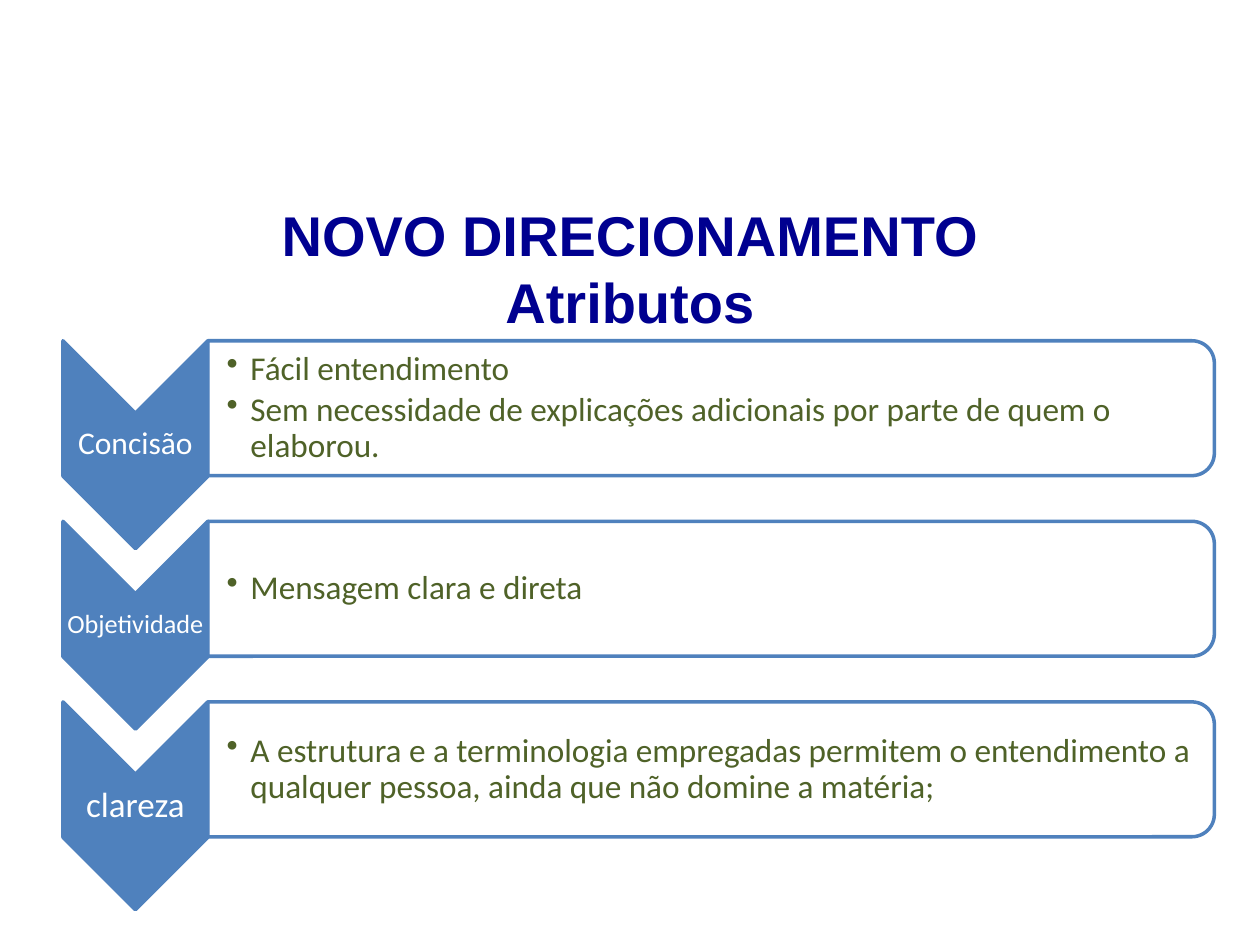
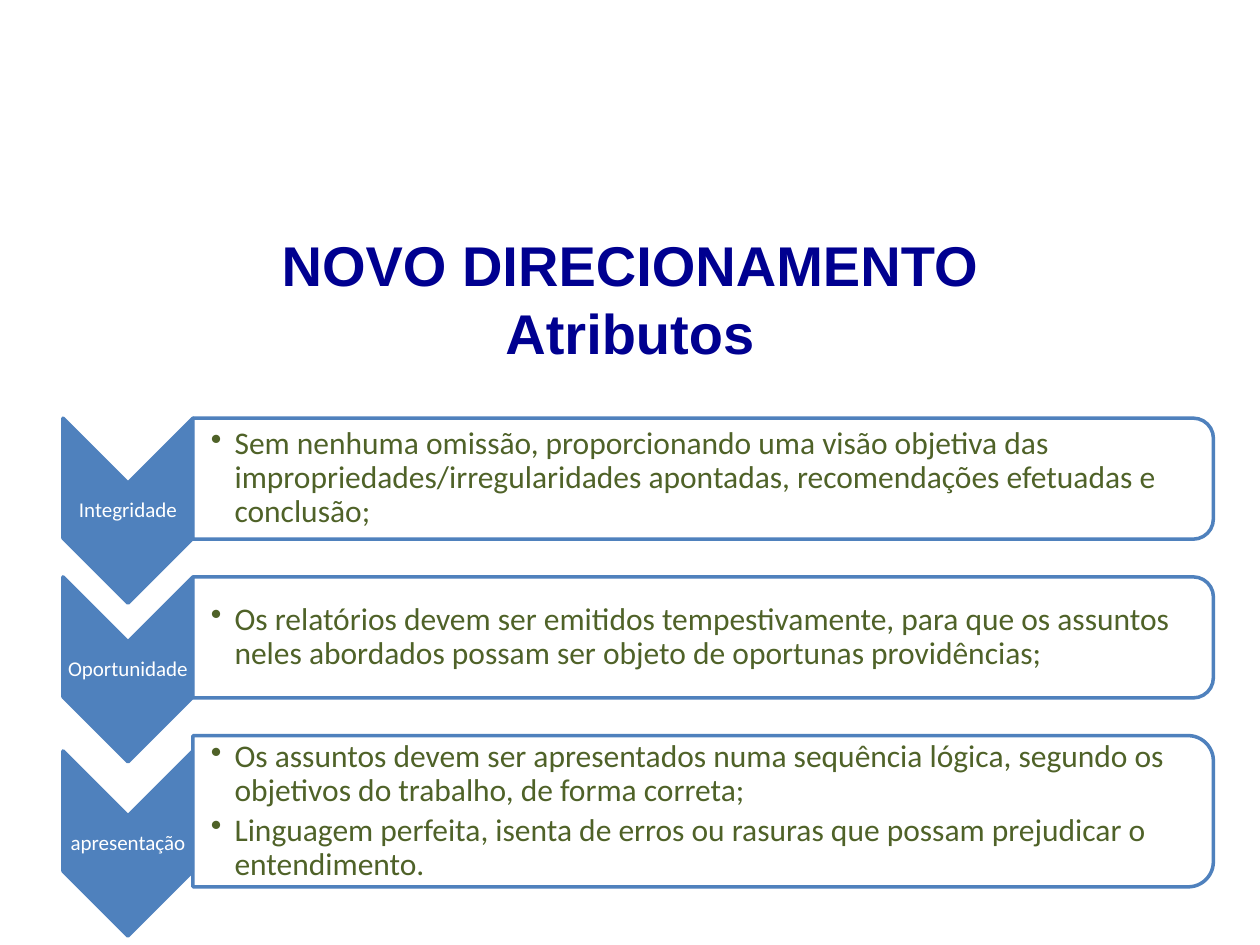
from dataclasses import dataclass

from lxml.etree import SubElement
from pptx import Presentation
from pptx.dml.color import RGBColor
from pptx.enum.shapes import MSO_SHAPE
from pptx.enum.text import MSO_ANCHOR, MSO_AUTO_SIZE, PP_ALIGN
from pptx.oxml.ns import qn
from pptx.util import Cm, Pt

COLORS = {
    "title": "000090",
    "accent": "4F81BD",
    "panel": "FFFFFF",
    "label": "FFFFFF",
    "item": "4F6228",
}
TITLE = "NOVO DIRECIONAMENTO\vAtributos"
TITLE_LAYOUT = 5
LEFT = 1.27
TITLE_WIDTH = 22.86
TITLE_HEIGHT = 3.18
THIN_INSET = 0.03
TEXT_MARGIN = 0.13
BULLET_INDENT = 0.48
PANEL_OPACITY = 90


@dataclass(frozen=True)
class Attribute:
    label: str
    label_size: int
    items: tuple[str, ...]
    panel_height: float
    chevron_shift: float = 0


@dataclass(frozen=True)
class AttributeSlide:
    title_top: float
    top: float
    pitch: float
    chevron_length: float
    chevron_width: float
    panel_width: float
    panel_inset: float
    item_size: int
    attributes: tuple[Attribute, ...]


@dataclass(frozen=True)
class Box:
    left: float
    top: float
    width: float
    height: float


SLIDES = (
    AttributeSlide(
        title_top=3.81, top=6.87, pitch=3.64,
        chevron_length=4.19, chevron_width=2.92,
        panel_width=20.29, panel_inset=0.38, item_size=19,
        attributes=(
            Attribute("Concisão", 18, (
                "Fácil entendimento",
                "Sem necessidade de explicações adicionais por parte de quem o elaborou.",
            ), 2.72),
            Attribute("Objetividade", 15, ("Mensagem clara e direta",), 2.72),
            Attribute("clareza", 20, (
                "A estrutura e a terminologia empregadas permitem o entendimento a "
                "qualquer pessoa, ainda que não domine a matéria;",
            ), 2.72),
        ),
    ),
    AttributeSlide(
        title_top=4.42, top=8.43, pitch=3.2,
        chevron_length=3.73, chevron_width=2.62,
        panel_width=20.57, panel_inset=0.36, item_size=18,
        attributes=(
            Attribute("Integridade", 12, (
                "Sem nenhuma omissão, proporcionando uma visão objetiva das "
                "impropriedades/irregularidades apontadas, recomendações efetuadas e conclusão;",
            ), 2.44),
            Attribute("Oportunidade", 12, (
                "Os relatórios devem ser emitidos tempestivamente, para que os assuntos "
                "neles abordados possam ser objeto de oportunas providências;",
            ), 2.44),
            Attribute("apresentação", 12, (
                "Os assuntos devem ser apresentados numa sequência lógica, segundo os "
                "objetivos do trabalho, de forma correta;",
                "Linguagem perfeita, isenta de erros ou rasuras que possam prejudicar o "
                "entendimento.",
            ), 3.05, chevron_shift=0.31),
        ),
    ),
)


def apply_format(target, values: dict) -> None:
    for name, value in values.items():
        setattr(target, name, value)


def format_font(font, name: str, size: int, color: str, bold: bool = False) -> None:
    apply_format(font, {"name": name, "size": Pt(size), "bold": bold})
    font.color.rgb = RGBColor.from_string(COLORS[color])


def add_title(slide, top: float) -> None:
    title = slide.shapes.title
    apply_format(title, {
        "left": Cm(LEFT), "top": Cm(top),
        "width": Cm(TITLE_WIDTH), "height": Cm(TITLE_HEIGHT),
    })
    frame = title.text_frame
    frame.text = TITLE
    apply_format(frame, {
        "auto_size": MSO_AUTO_SIZE.NONE, "vertical_anchor": MSO_ANCHOR.MIDDLE,
    })
    paragraph = frame.paragraphs[0]
    paragraph.alignment = PP_ALIGN.CENTER
    for run in paragraph.runs:
        format_font(run.font, "Arial", 32, "title", bold=True)


def add_turned_shape(slide, preset: MSO_SHAPE, box: Box, fill: str):
    left = box.left + (box.width - box.height) / 2
    top = box.top + (box.height - box.width) / 2
    shape = slide.shapes.add_shape(
        preset, Cm(left), Cm(top), Cm(box.height), Cm(box.width))
    shape.rotation = 90
    shape.shadow.inherit = False
    shape.fill.solid()
    shape.fill.fore_color.rgb = RGBColor.from_string(COLORS[fill])
    shape.line.color.rgb = RGBColor.from_string(COLORS["accent"])
    shape.line.width = Pt(2)
    return shape


def set_opacity(shape, percent: int) -> None:
    color = shape.fill._xPr.find(qn("a:solidFill"))[0]
    SubElement(color, qn("a:alpha"), val=str(percent * 1000))


def add_text_frame(slide, box: Box, left_inset: float):
    text_box = slide.shapes.add_textbox(
        Cm(box.left), Cm(box.top), Cm(box.width), Cm(box.height))
    frame = text_box.text_frame
    apply_format(frame, {
        "word_wrap": True,
        "vertical_anchor": MSO_ANCHOR.MIDDLE,
        "margin_left": Cm(left_inset),
        "margin_right": Cm(THIN_INSET),
        "margin_top": Cm(THIN_INSET),
        "margin_bottom": Cm(THIN_INSET),
    })
    return frame


def add_bullet(paragraph) -> None:
    properties = paragraph._p.get_or_add_pPr()
    properties.set("marL", str(Cm(BULLET_INDENT)))
    properties.set("indent", str(-Cm(BULLET_INDENT)))
    SubElement(properties, qn("a:buChar"), char="•")


def add_chevron(slide, box: Box, attribute: Attribute) -> None:
    add_turned_shape(slide, MSO_SHAPE.CHEVRON, box, "accent")
    paragraph = add_text_frame(slide, box, THIN_INSET).paragraphs[0]
    paragraph.text = attribute.label
    apply_format(paragraph, {"alignment": PP_ALIGN.CENTER, "line_spacing": 0.9})
    format_font(paragraph.font, "Calibri", attribute.label_size, "label")


def add_panel(slide, box: Box, items: tuple[str, ...], inset: float, size: int) -> None:
    panel = add_turned_shape(slide, MSO_SHAPE.ROUND_2_SAME_RECTANGLE, box, "panel")
    set_opacity(panel, PANEL_OPACITY)
    text_area = Box(box.left, box.top, box.width - TEXT_MARGIN, box.height)
    frame = add_text_frame(slide, text_area, inset)
    for index, item in enumerate(items):
        paragraph = frame.add_paragraph() if index else frame.paragraphs[0]
        paragraph.text = item
        add_bullet(paragraph)
        apply_format(paragraph, {"level": 1, "line_spacing": 0.9, "space_after": Pt(3)})
        format_font(paragraph.font, "Calibri", size, "item")


def add_attribute_slide(presentation, content: AttributeSlide) -> None:
    slide = presentation.slides.add_slide(presentation.slide_layouts[TITLE_LAYOUT])
    add_title(slide, content.title_top)
    for index, attribute in enumerate(content.attributes):
        top = content.top + index * content.pitch
        chevron = Box(LEFT, top + attribute.chevron_shift,
                      content.chevron_width, content.chevron_length)
        panel = Box(LEFT + content.chevron_width, top,
                    content.panel_width, attribute.panel_height)
        add_chevron(slide, chevron, attribute)
        add_panel(slide, panel, attribute.items, content.panel_inset, content.item_size)


def main() -> None:
    presentation = Presentation()
    apply_format(presentation, {"slide_width": Cm(25.4), "slide_height": Cm(19.05)})
    for content in SLIDES:
        add_attribute_slide(presentation, content)
    presentation.save("out.pptx")


if __name__ == "__main__":
    main()
